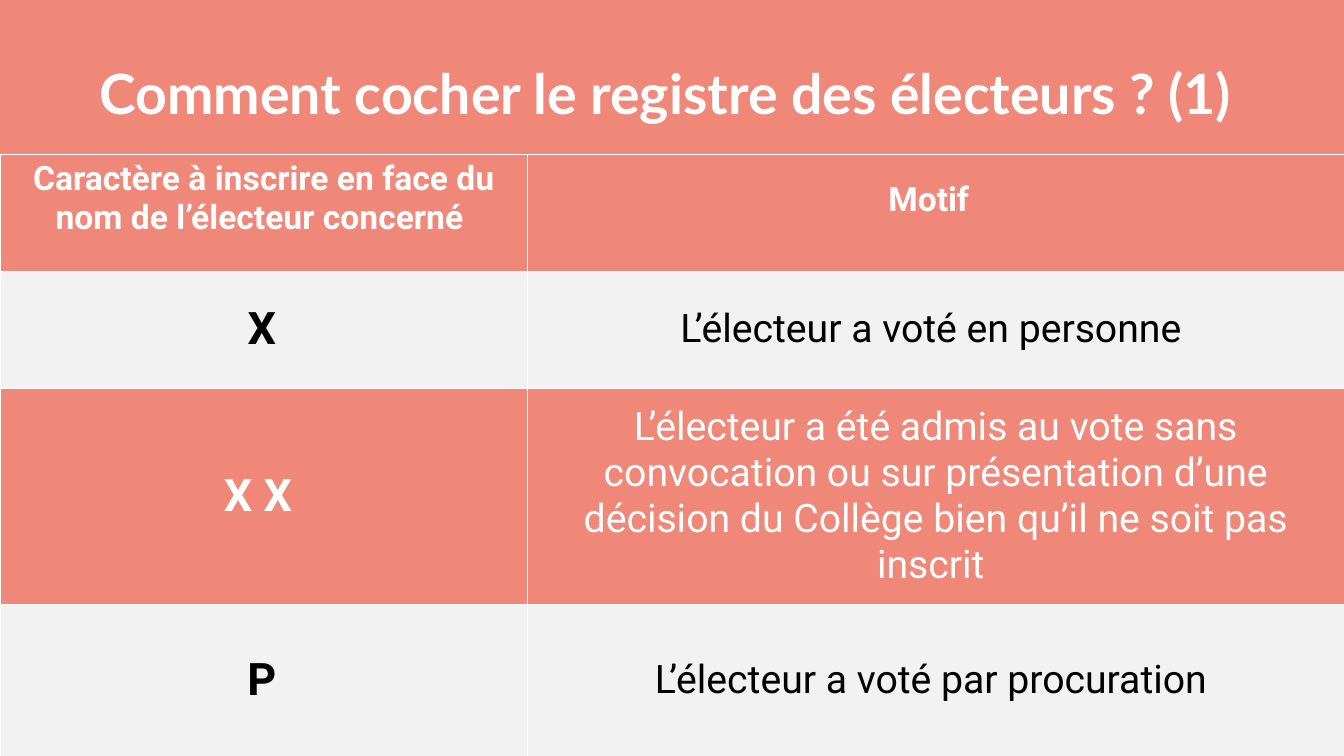
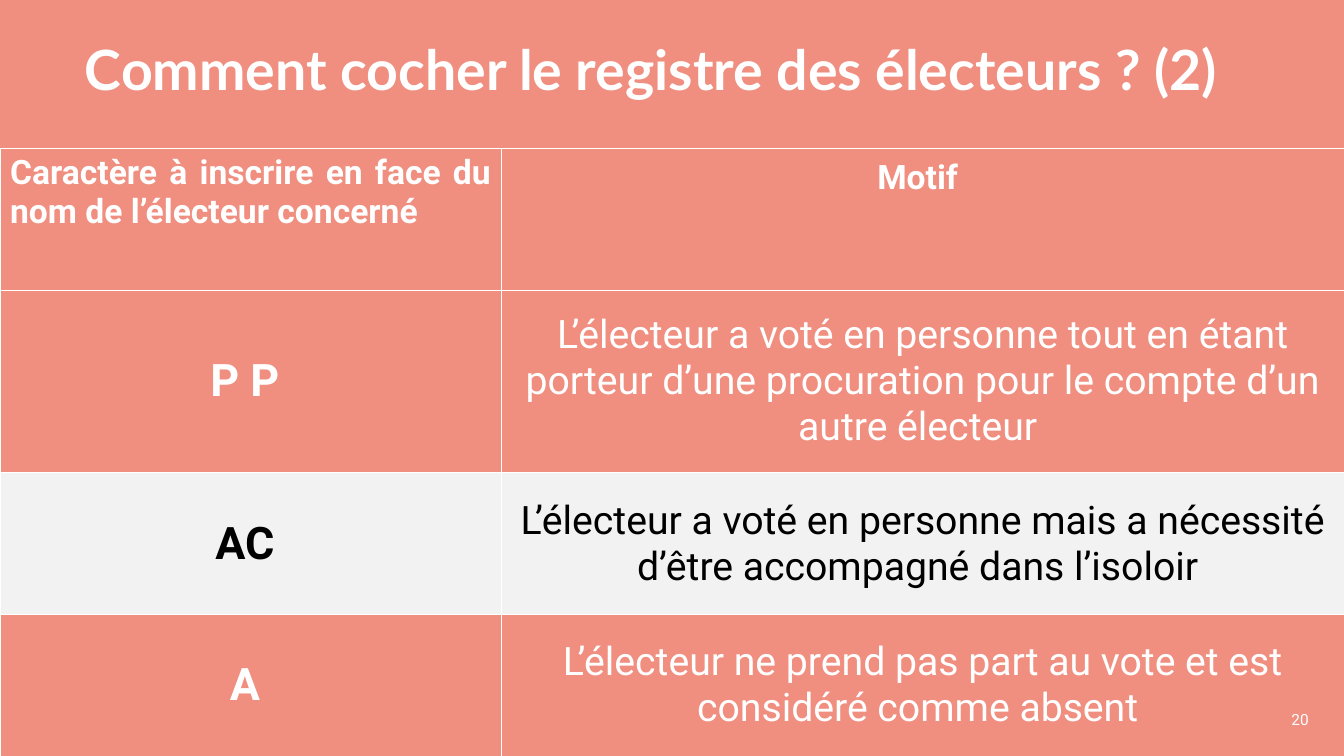
from lxml import etree
from pptx import Presentation
from pptx.dml.color import RGBColor
from pptx.enum.text import MSO_ANCHOR, MSO_AUTO_SIZE, PP_ALIGN
from pptx.oxml.ns import qn
from pptx.util import Inches, Pt

CENTER, JUSTIFY, RIGHT = PP_ALIGN.CENTER, PP_ALIGN.JUSTIFY, PP_ALIGN.RIGHT
TOP, MIDDLE, BOTTOM = MSO_ANCHOR.TOP, MSO_ANCHOR.MIDDLE, MSO_ANCHOR.BOTTOM
NO_AUTOFIT = MSO_AUTO_SIZE.NONE

WIDTH, HEIGHT = 13.33, 7.5
TITLE_ONLY = 5
HARD_SPACE = chr(160)

THEME = {
    "band": "F2F2F2",
    "line": "FFFFFF",
    "line_width": 0.6,
    "title_spacing": 44,
    "title": {"name": "Lato", "size": 39.6, "bold": True, "color": "FFFFFF"},
    "header": {"name": "Roboto", "size": 24, "bold": True, "color": "FFFFFF"},
    "mark": {"name": "Roboto", "size": 32, "bold": True, "color": "FFFFFF"},
    "reason": {"name": "Roboto", "size": 28, "bold": False, "color": "FFFFFF"},
    "page": {"name": "Roboto", "size": 11, "bold": False, "color": "FFFFFF"},
    "on_band": "000000",
}

HEADERS = ("Caractère à inscrire en face du nom de l’électeur concerné", "Motif")

# Rows: mark, reason, shaded band, size of the space that ends the mark.
# The last column and the last row take what is left of the slide.
SLIDES = [
    {
        "title": "Comment cocher le registre des électeurs ? (1)",
        "background": "EF8879",
        "title_box": (0.32, 0.16, 12.56, 1.14),
        "table_top": 1.53,
        "first_column": 5.23,
        "row_heights": (1.16, 1.16, 2.15),
        "header_align": CENTER,
        "header_space": 40,
        "rows": [
            ("X", "L’électeur a voté en personne", True, 10.5),
            ("X X", "L’électeur a été admis au vote sans convocation ou sur "
                    "présentation d’une décision du Collège bien qu’il ne soit "
                    "pas inscrit", False, 32),
            ("P", "L’électeur a voté par procuration", True, 10.5),
        ],
    },
    {
        "title": "Comment cocher le registre des électeurs ? (2)",
        "background": "F08E80",
        "title_box": (0.35, 0.16, 12.21, 0.9),
        "table_top": 1.47,
        "first_column": 4.97,
        "row_heights": (1.41, 1.81, 1.41),
        "header_align": JUSTIFY,
        "header_space": 28,
        "page": "20",
        "rows": [
            ("P P", "L’électeur a voté en personne tout en étant porteur d’une "
                    "procuration pour le compte d’un autre électeur", False, 32),
            ("AC", "L’électeur a voté en personne mais a nécessité d’être "
                   "accompagné dans l’isoloir", True, 32),
            ("A", "L’électeur ne prend pas part au vote et est considéré comme "
                  "absent", False, 32),
        ],
    },
]


def add_run(paragraph, text, style, **changes):
    run = paragraph.add_run()
    run.text = text
    values = {**style, **changes}
    run.font.color.rgb = RGBColor.from_string(values.pop("color"))
    values["size"] = Pt(values["size"])
    for name, value in values.items():
        setattr(run.font, name, value)


def place(shape, box):
    for name, value in zip(("left", "top", "width", "height"), box):
        setattr(shape, name, Inches(value))


def draw_borders(cell):
    properties = cell._tc.get_or_add_tcPr()
    for index, side in enumerate(("lnL", "lnR", "lnT", "lnB")):
        line = etree.Element(qn("a:" + side), w=str(Pt(THEME["line_width"])))
        fill = etree.SubElement(line, qn("a:solidFill"))
        etree.SubElement(fill, qn("a:srgbClr"), val=THEME["line"])
        properties.insert(index, line)


def fill_cell(cell, text, style, space_size, align=CENTER, anchor=MIDDLE, shaded=False):
    if shaded:
        cell.fill.solid()
        cell.fill.fore_color.rgb = RGBColor.from_string(THEME["band"])
        style = {**style, "color": THEME["on_band"]}
    else:
        cell.fill.background()
    draw_borders(cell)
    cell.vertical_anchor = anchor
    paragraph = cell.text_frame.paragraphs[0]
    paragraph.alignment = align
    add_run(paragraph, text, style)
    add_run(paragraph, HARD_SPACE, style, size=space_size)


def add_title(slide, content):
    title = slide.shapes.title
    place(title, content["title_box"])
    frame = title.text_frame
    frame.auto_size = NO_AUTOFIT
    frame.vertical_anchor = BOTTOM
    paragraph = frame.paragraphs[0]
    paragraph.alignment = CENTER
    paragraph.line_spacing = Pt(THEME["title_spacing"])
    add_run(paragraph, content["title"], THEME["title"])


def add_page_number(slide, text):
    box = slide.shapes.add_textbox(*map(Inches, (10.08, 6.94, 3, 0.4)))
    box.text_frame.word_wrap = True
    box.text_frame.vertical_anchor = MIDDLE
    paragraph = box.text_frame.paragraphs[0]
    paragraph.alignment = RIGHT
    add_run(paragraph, text, THEME["page"])


def add_register_table(slide, content):
    top, first = content["table_top"], content["first_column"]
    height = HEIGHT - top
    heights = (*content["row_heights"], height - sum(content["row_heights"]))
    table = slide.shapes.add_table(
        len(heights), 2, 0, Inches(top), Inches(WIDTH), Inches(height)).table
    table.first_row = table.horz_banding = False
    for column, width in zip(table.columns, (first, WIDTH - first)):
        column.width = Inches(width)
    for row, row_height in zip(table.rows, heights):
        row.height = Inches(row_height)

    # Header row
    header = THEME["header"]
    fill_cell(table.cell(0, 0), HEADERS[0], header, header["size"],
              content["header_align"], TOP)
    fill_cell(table.cell(0, 1), HEADERS[1], header, content["header_space"], anchor=TOP)

    # Marks and their reasons
    reason_style = THEME["reason"]
    for index, (mark, reason, shaded, space) in enumerate(content["rows"], 1):
        fill_cell(table.cell(index, 0), mark, THEME["mark"], space, shaded=shaded)
        fill_cell(table.cell(index, 1), reason, reason_style, reason_style["size"],
                  shaded=shaded)


def main():
    presentation = Presentation()
    presentation.slide_width, presentation.slide_height = Inches(WIDTH), Inches(HEIGHT)
    for content in SLIDES:
        slide = presentation.slides.add_slide(presentation.slide_layouts[TITLE_ONLY])
        background = slide.background.fill
        background.solid()
        background.fore_color.rgb = RGBColor.from_string(content["background"])
        add_title(slide, content)
        add_register_table(slide, content)
        if "page" in content:
            add_page_number(slide, content["page"])
    presentation.save("out.pptx")


if __name__ == "__main__":
    main()
